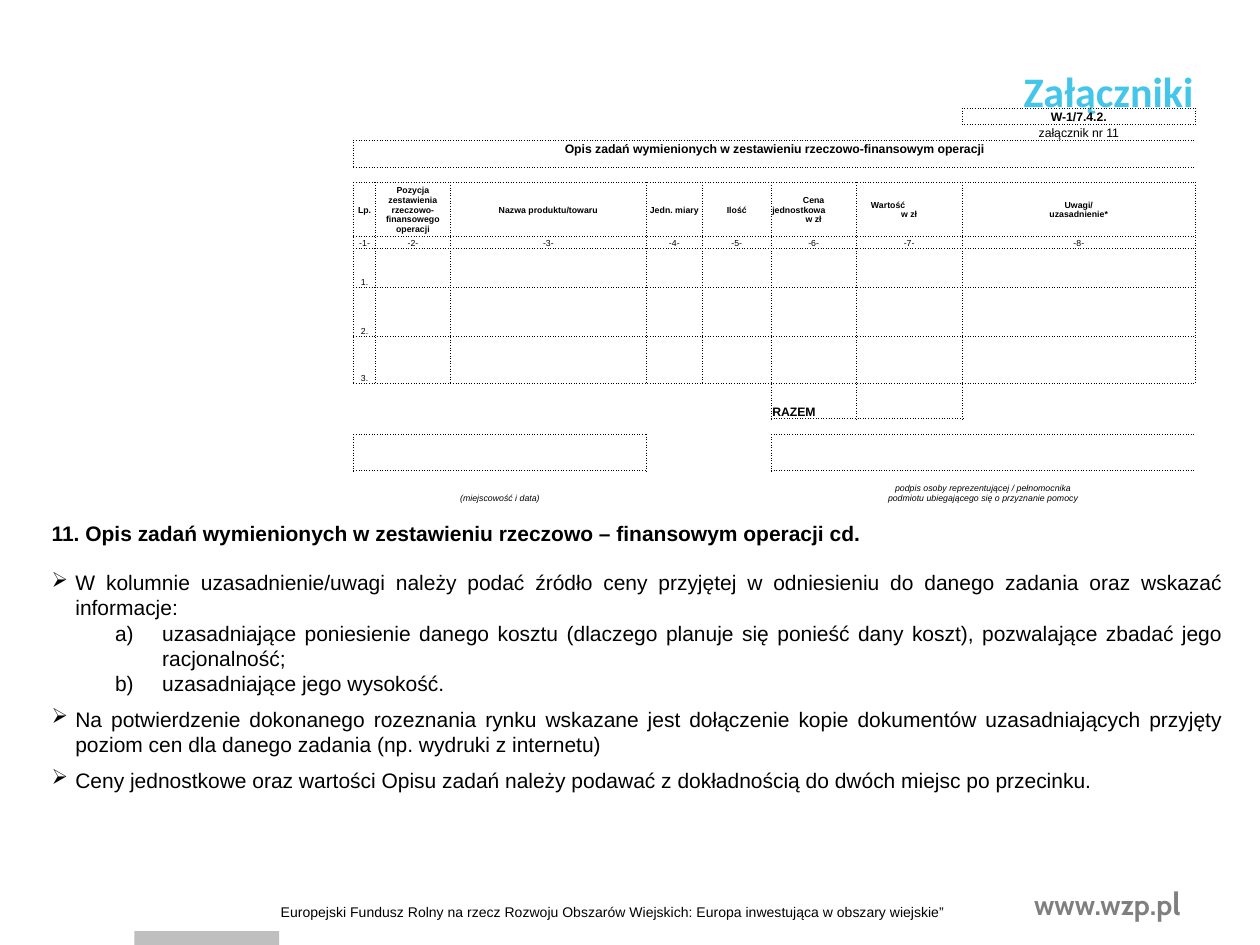
from itertools import product

from lxml import etree
from pptx import Presentation
from pptx import util as u
from pptx.dml.color import RGBColor
from pptx.enum import shapes, text
from pptx.oxml.ns import qn

COLORS = {"cyan": "44C6EB", "black": "000000", "address": "7F7F7F", "bar": "BFBFBF"}
NO_STYLE = "{2D5ABB26-0587-4C30-8999-92F81FD0307C}"
LEFT, RIGHT, CENTER, JUSTIFY = (
    text.PP_ALIGN.LEFT, text.PP_ALIGN.RIGHT, text.PP_ALIGN.CENTER, text.PP_ALIGN.JUSTIFY)
MIDDLE, BOTTOM = text.MSO_ANCHOR.MIDDLE, text.MSO_ANCHOR.BOTTOM

TITLE = "Załączniki"
ADDRESS = [("www.wzp.p", 16), ("l", 18)]
FUND = ("Europejski Fundusz Rolny na rzecz Rozwoju Obszarów Wiejskich: "
        "Europa inwestująca w obszary wiejskie”")

# kind, text, space before, space after (points)
BODY = [
    ("heading", "11. Opis zadań wymienionych w zestawieniu rzeczowo – finansowym operacji cd.", 0, 0),
    ("arrow", "W kolumnie uzasadnienie/uwagi należy podać źródło ceny przyjętej w odniesieniu "
              "do danego zadania oraz wskazać informacje:", 14, 0),
    ("letter", "uzasadniające poniesienie danego kosztu (dlaczego planuje się ponieść dany koszt), "
               "pozwalające zbadać jego racjonalność;", 0, 0),
    ("letter", "uzasadniające jego wysokość.", 0, 6),
    ("arrow", "Na potwierdzenie dokonanego rozeznania rynku wskazane jest dołączenie kopie dokumentów "
              "uzasadniających przyjęty poziom cen dla danego zadania (np. wydruki z internetu)", 0, 6),
    ("arrow", "Ceny jednostkowe oraz wartości Opisu zadań należy podawać z dokładnością "
              "do dwóch miejsc po przecinku.", 0, 6),
]
# kind: left margin, hanging indent (cm), bullet tag, bullet attributes
BULLETS = {
    "arrow": (0.48, 0.48, "a:buChar", {"char": "➢"}),
    "letter": (2.23, 0.95, "a:buAutoNum", {"type": "alphaLcParenR"}),
}

COLUMNS = [0.44, 1.51, 3.95, 1.13, 1.39, 1.71, 2.14, 4.7]
ROWS = [0.3, 0.3, 0.32, 0.24, 0.3, 1.07, 0.24, 0.79, 0.99, 0.95, 0.71, 0.32, 0.46, 0.27, 0.42, 0.24]
# a line is centred; a pair gives a left-aligned line and its indent in cm
HEADERS = [
    ["Lp."],
    ["Pozycja zestawienia rzeczowo-finansowego operacji"],
    ["Nazwa produktu/towaru"],
    ["Jedn. miary"],
    ["Ilość"],
    ["Cena", ("jednostkowa", 0), "w zł"],
    [("Wartość", 0.28), "w zł"],
    ["Uwagi/", "uzasadnienie*"],
]
# (row, column): lines, size, bold, italic, anchor
CELLS = {
    (0, 7): (["W-1/7.4.2."], 7, True, False, MIDDLE),
    (1, 7): (["załącznik nr 11"], 7, False, False, BOTTOM),
    (2, 0): (["Opis zadań wymienionych w zestawieniu rzeczowo-finansowym operacji"], 7, True, False, BOTTOM),
    (10, 5): ([("RAZEM", 0)], 7, True, False, BOTTOM),
    (14, 5): (["podpis osoby reprezentującej / pełnomocnika",
               "podmiotu ubiegającego się o przyznanie pomocy"], 5, False, True, BOTTOM),
    (15, 0): (["(miejscowość i data)"], 5, False, True, BOTTOM),
}
for column, lines in enumerate(HEADERS):
    CELLS[5, column] = (lines, 5, True, False, MIDDLE)
    CELLS[6, column] = ([f"-{column + 1}-"], 5, False, False, BOTTOM)
for number in (1, 2, 3):
    CELLS[6 + number, 0] = ([f"{number}."], 5, False, False, BOTTOM)

# first row, first column, last row, last column
MERGES = [(0, 0, 0, 1), (2, 0, 2, 7), (3, 0, 3, 7), (10, 0, 10, 4), (12, 0, 13, 2),
          (12, 5, 13, 7), (14, 0, 14, 2), (14, 5, 15, 7), (15, 0, 15, 2)]
FRAMES = [(0, 7, 0, 7), (2, 0, 3, 7), (10, 5, 10, 5), (10, 6, 10, 6), (12, 0, 13, 2), (12, 5, 13, 7)]
FRAMES += [(row, column, row, column) for row, column in product(range(5, 10), range(8))]


def style(font, size, color="black", face="Arial", bold=False, italic=False):
    font.size, font.name, font.bold, font.italic = u.Pt(size), face, bold, italic
    font.color.rgb = RGBColor.from_string(COLORS[color])


def add_text_frame(slide, *box):
    frame = slide.shapes.add_textbox(*map(u.Cm, box)).text_frame
    frame.word_wrap = True
    return frame


def add_bullet(paragraph, kind):
    margin, hanging, tag, attributes = BULLETS[kind]
    properties = paragraph._p.get_or_add_pPr()
    properties.set("marL", str(u.Cm(margin)))
    properties.set("indent", str(-u.Cm(hanging)))
    etree.SubElement(properties, qn(tag), attributes)


def fill_cell(cell, lines, size, bold, italic, anchor):
    cell.vertical_anchor = anchor
    cell.margin_left = cell.margin_right = cell.margin_top = u.Cm(0.02)
    cell.margin_bottom = 0
    for index, line in enumerate(lines):
        frame = cell.text_frame
        paragraph = frame.add_paragraph() if index else frame.paragraphs[0]
        wording, indent = line if isinstance(line, tuple) else (line, None)
        if indent is None:
            paragraph.alignment = CENTER
        else:
            paragraph.alignment = LEFT
            paragraph._p.get_or_add_pPr().set("marL", str(u.Cm(indent)))
        if wording:
            paragraph.add_run().text = wording
        else:
            etree.SubElement(paragraph._p, qn("a:endParaRPr"), {"sz": str(size * 100)})
        style(paragraph.font, size, bold=bold, italic=italic)


def frame_sides():
    """Collect the dotted sides of every cell, seen from both cells that share a side."""
    sides = set()
    for top, left, bottom, right in FRAMES:
        for row in range(top, bottom + 1):
            sides |= {(row, left, "L"), (row, left - 1, "R"), (row, right, "R"), (row, right + 1, "L")}
        for column in range(left, right + 1):
            sides |= {(top, column, "T"), (top - 1, column, "B"),
                      (bottom, column, "B"), (bottom + 1, column, "T")}
    return sides


def add_border(cell, side, dotted):
    line = etree.SubElement(cell._tc.get_or_add_tcPr(), qn(f"a:ln{side}"), {"w": str(u.Pt(0.5))})
    if dotted:
        solid = etree.SubElement(line, qn("a:solidFill"))
        etree.SubElement(solid, qn("a:srgbClr"), {"val": COLORS["black"]})
        etree.SubElement(line, qn("a:prstDash"), {"val": "sysDot"})
    else:
        etree.SubElement(line, qn("a:noFill"))


def add_form(slide):
    form = slide.shapes.add_table(len(ROWS), len(COLUMNS), u.Cm(7.13), u.Cm(2.19),
                                  u.Cm(sum(COLUMNS)), u.Cm(sum(ROWS))).table
    form.first_row = form.horz_banding = False
    form._tbl.tblPr.find(qn("a:tableStyleId")).text = NO_STYLE
    for column, width in zip(form.columns, COLUMNS):
        column.width = u.Cm(width)
    for row, height in zip(form.rows, ROWS):
        row.height = u.Cm(height)
    dotted = frame_sides()
    for row, column in product(range(len(ROWS)), range(len(COLUMNS))):
        cell = form.cell(row, column)
        fill_cell(cell, *CELLS.get((row, column), ([""], 5, False, False, BOTTOM)))
        for side in "LRTB":
            add_border(cell, side, (row, column, side) in dotted)
        cell.fill.background()
    for top, left, bottom, right in MERGES:
        form.cell(top, left).merge(form.cell(bottom, right))


def add_body(slide):
    frame = add_text_frame(slide, 0.79, 10.36, 24.13, 5.82)
    for index, (kind, wording, before, after) in enumerate(BODY):
        paragraph = frame.add_paragraph() if index else frame.paragraphs[0]
        paragraph.text = wording
        paragraph.space_before, paragraph.space_after = u.Pt(before), u.Pt(after)
        if kind in BULLETS:
            paragraph.alignment = JUSTIFY
            paragraph.level = int(kind == "letter")
            add_bullet(paragraph, kind)
        style(paragraph.font, 12, bold=kind == "heading")


def add_footer(slide):
    bar = slide.shapes.add_shape(shapes.MSO_SHAPE.RECTANGLE, *map(u.Cm, (2.71, 18.77, 2.92, 0.28)))
    bar.shadow.inherit = False
    bar.fill.solid()
    bar.fill.fore_color.rgb = RGBColor.from_string(COLORS["bar"])
    bar.line.fill.background()
    address = add_text_frame(slide, 20.6, 17.7, 3.78, 1.02).paragraphs[0]
    for wording, size in ADDRESS:
        run = address.add_run()
        run.text = wording
        style(run.font, size, "address", "Cabin", bold=True)
    fund = add_text_frame(slide, 5.41, 18.08, 17.98, 0.61).paragraphs[0]
    fund.text = FUND
    style(fund.font, 8)


def main():
    deck = Presentation()
    deck.slide_width, deck.slide_height = u.Cm(25.4), u.Cm(19.05)
    slide = deck.slides.add_slide(deck.slide_layouts[6])
    add_footer(slide)
    title = add_text_frame(slide, 8, 1.19, 16.31, 1.27).paragraphs[0]
    title.text = TITLE
    title.alignment = RIGHT
    style(title.font, 24, "cyan", "Calibri", bold=True)
    add_body(slide)
    add_form(slide)
    deck.save("out.pptx")


if __name__ == "__main__":
    main()
